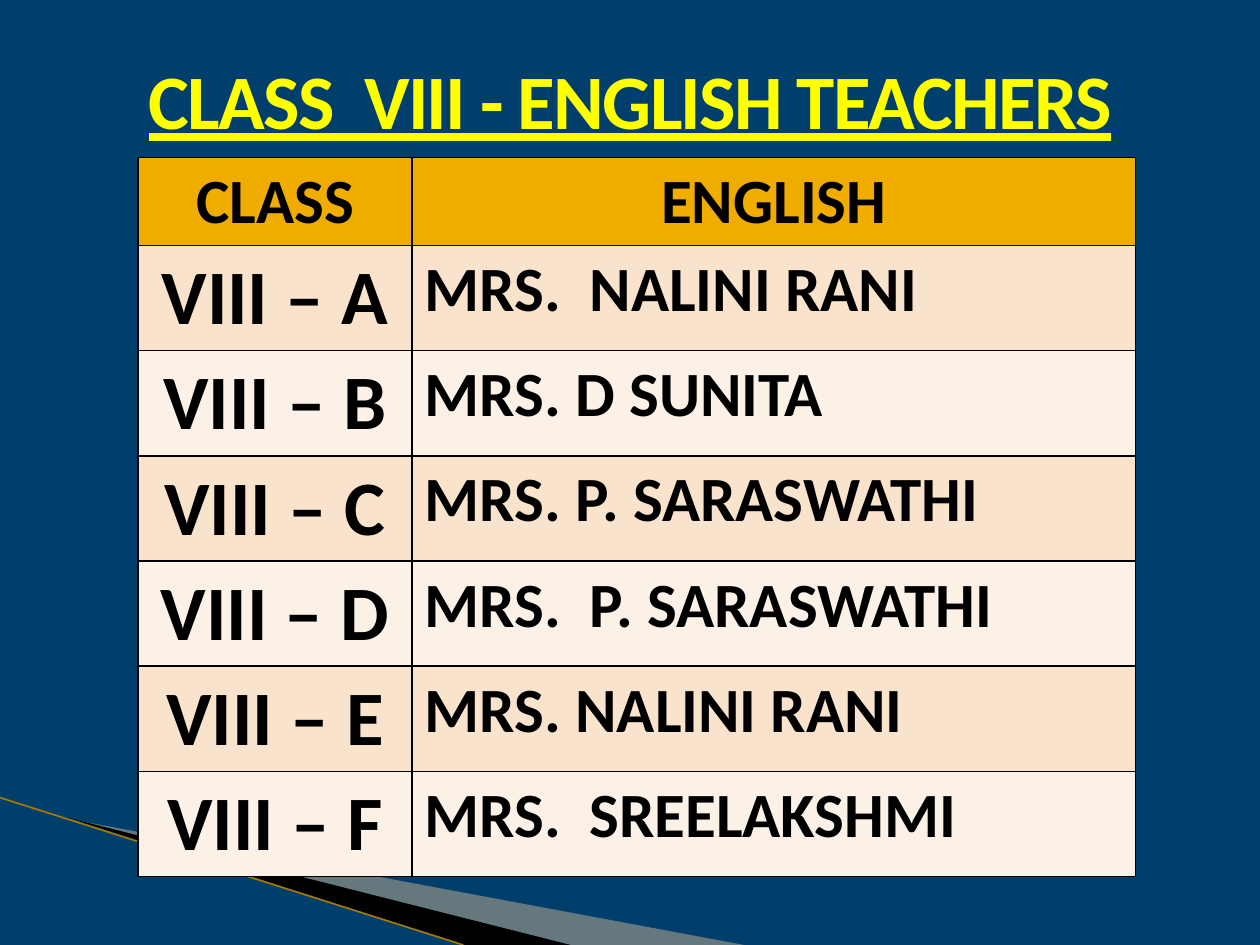
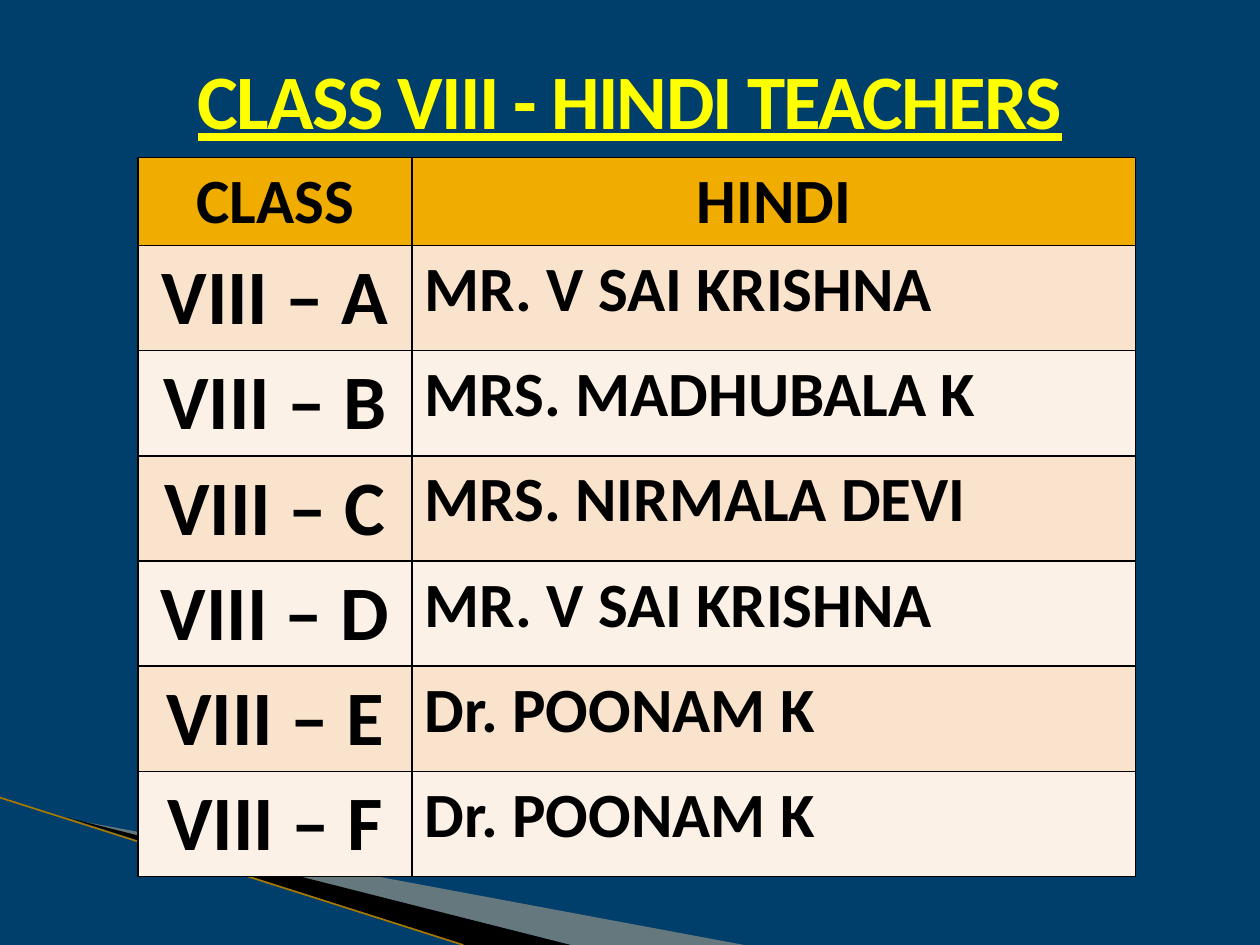
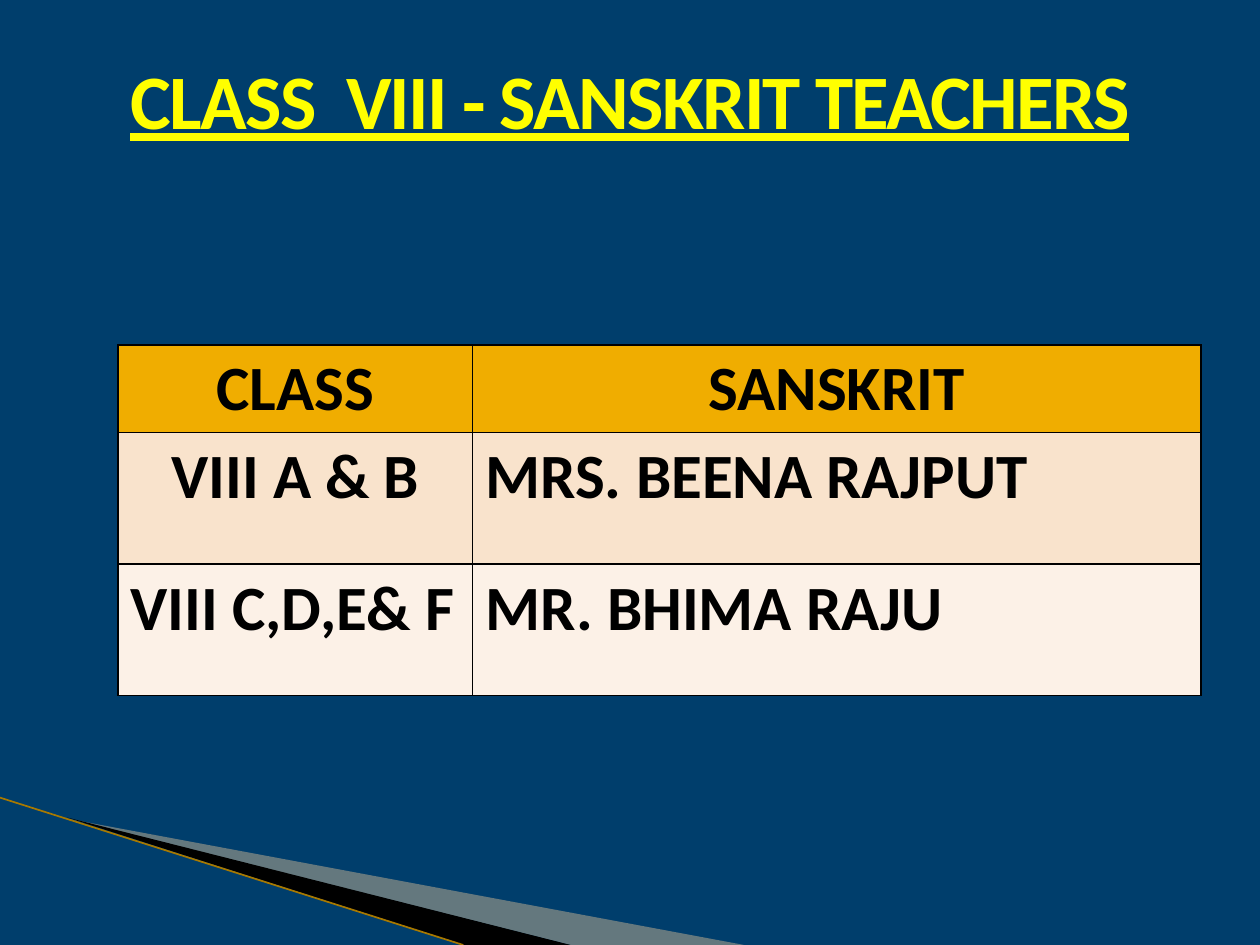
from dataclasses import dataclass

from lxml import etree
from pptx import Presentation
from pptx import util as u
from pptx.dml.color import RGBColor
from pptx.enum import shapes, text
from pptx.oxml.ns import qn

Cm, Pt = u.Cm, u.Pt
FONT = "Calibri"
COLORS = {
    "background": "003E6C", "title": "FFFF00", "ink": "000000",
    "header": "F0AD00", "odd_row": "F9E3CC", "even_row": "FCF1E7",
    "wing": "FCCF9B", "fold": "000000", "edge": "A87900",
}
HEADER_HEIGHT = 1.77
PAD_TOP, PAD_BOTTOM = 0.12, 0.09
CENTER, LEFT = text.PP_ALIGN.CENTER, text.PP_ALIGN.LEFT


@dataclass
class Wedge:
    frame: tuple[float, float, float, float]
    points: list[tuple[float, float]]
    color: str
    opacity: int = 100


@dataclass
class TeacherSlide:
    title: str
    subject: str
    rows: list[tuple[str, str]]
    left: float = 2.78
    top: float = 3.18
    widths: tuple[float, float] = (5.53, 14.58)
    row_height: float = 2.12
    class_size: int = 44
    last_class_align: text.PP_ALIGN = CENTER


WEDGES = [
    Wedge((1.98, 13.89, 10.57, 4.01),
          [(1.39, 16.51), (15, 19.05), (11.5, 19.05)], "wing", 40),
    Wedge((-0.15, 16.08, 10.57, 2.34),
          [(1.35, 16.48), (11.5, 19.05), (9.35, 19.05)], "fold"),
]


def sections(*teachers: str) -> list[tuple[str, str]]:
    return [(f"VIII – {s}", t) for s, t in zip("ABCDEF", teachers)]


SLIDES = [
    TeacherSlide("CLASS  VIII - ENGLISH TEACHERS", "ENGLISH", sections(
        "MRS.  NALINI RANI", "MRS. D SUNITA", "MRS. P. SARASWATHI",
        "MRS.  P. SARASWATHI", "MRS. NALINI RANI", "MRS.  SREELAKSHMI")),
    TeacherSlide("CLASS VIII - HINDI TEACHERS", "HINDI", sections(
        "MR. V SAI KRISHNA", "MRS. MADHUBALA K", "MRS. NIRMALA DEVI",
        "MR. V SAI KRISHNA", "Dr. POONAM K", "Dr. POONAM K")),
    TeacherSlide("CLASS  VIII - SANSKRIT TEACHERS", "SANSKRIT", [
        ("VIII A & B", "MRS. BEENA RAJPUT"),
        ("VIII C,D,E& F", "MR. BHIMA RAJU")],
        left=2.38, top=6.95, widths=(7.15, 14.68), row_height=2.65,
        class_size=36, last_class_align=LEFT),
]


def rgb(name: str) -> RGBColor:
    return RGBColor.from_string(COLORS[name])


def write(tf, content: str, *, size: int = 36, color: str = "ink",
          align=LEFT, underline: bool = False, spacing: float = 0,
          line_spacing: float = 1.0) -> None:
    p = tf.paragraphs[0]
    p.alignment = align
    p.line_spacing = line_spacing
    r = p.add_run()
    r.text = content
    r.font.name, r.font.size, r.font.bold = FONT, Pt(size), True
    r.font.color.rgb = rgb(color)
    if underline:
        r.font.underline = True
    if spacing:
        r.font._element.set("spc", str(int(spacing * 100)))


# Corner decoration shared by all slides
def set_frame(sp, frame: tuple[float, float, float, float]) -> None:
    """Change the frame while the outline stays where it is."""
    left, top, width, height = (Cm(v) for v in frame)
    dx, dy = sp.left - left, sp.top - top
    for outline in sp._element.iter(qn("a:path")):
        outline.set("w", str(width))
        outline.set("h", str(height))
    for pt in sp._element.iter(qn("a:pt")):
        pt.set("x", str(int(pt.get("x")) + dx))
        pt.set("y", str(int(pt.get("y")) + dy))
    sp.left, sp.top, sp.width, sp.height = left, top, width, height


def draw_wedge(slide, wedge: Wedge) -> None:
    points = [(Cm(x), Cm(y)) for x, y in wedge.points]
    builder = slide.shapes.build_freeform(*points[0])
    builder.add_line_segments(points[1:], close=True)
    sp = builder.convert_to_shape()
    set_frame(sp, wedge.frame)
    sp.shadow.inherit = False
    sp.line.fill.background()
    sp.fill.solid()
    sp.fill.fore_color.rgb = rgb(wedge.color)
    if wedge.opacity < 100:
        clr = sp._element.spPr.find(qn("a:solidFill"))[0]
        etree.SubElement(clr, qn("a:alpha")).set("val", str(wedge.opacity * 1000))


def draw_corner(slide) -> None:
    for wedge in WEDGES:
        draw_wedge(slide, wedge)
    line = slide.shapes.add_connector(
        shapes.MSO_CONNECTOR.STRAIGHT, Cm(0), Cm(16.08), Cm(9.34), Cm(19.05))
    line.line.color.rgb = rgb("edge")
    line.line.width = Pt(0.95)
    etree.SubElement(line._element.spPr, qn("a:effectLst"))


def draw_title(slide, title: str) -> None:
    tf = slide.shapes.add_textbox(0, 0, Cm(25.4), Cm(3.07)).text_frame
    tf.word_wrap = True
    write(tf, title, size=44, color="title", align=CENTER, underline=True,
          spacing=-1, line_spacing=1.5)


# Table
def style_cell(cell, fill: str) -> None:
    cell.margin_top, cell.margin_bottom = Cm(PAD_TOP), Cm(PAD_BOTTOM)
    tc_pr = cell._tc.get_or_add_tcPr()
    for side in ("lnL", "lnR", "lnT", "lnB"):
        ln = etree.SubElement(tc_pr, qn(f"a:{side}"), w=str(Pt(1)))
        solid = etree.SubElement(ln, qn("a:solidFill"))
        etree.SubElement(solid, qn("a:srgbClr"), val=COLORS["ink"])
    cell.fill.solid()
    cell.fill.fore_color.rgb = rgb(fill)


def draw_table(slide, data: TeacherSlide) -> None:
    count = len(data.rows)
    height = HEADER_HEIGHT + count * data.row_height
    table = slide.shapes.add_table(
        count + 1, 2, Cm(data.left), Cm(data.top),
        Cm(sum(data.widths)), Cm(height)).table
    table.first_row = table.horz_banding = False
    for column, width in zip(table.columns, data.widths):
        column.width = Cm(width)
    for i, row in enumerate([("CLASS", data.subject), *data.rows]):
        table.rows[i].height = Cm(data.row_height if i else HEADER_HEIGHT)
        fill = "header" if i == 0 else "odd_row" if i % 2 else "even_row"
        class_align = data.last_class_align if i == count else CENTER
        aligns = (class_align, LEFT if i else CENTER)
        sizes = (data.class_size if i else 36, 36)
        for j, content in enumerate(row):
            cell = table.cell(i, j)
            style_cell(cell, fill)
            write(cell.text_frame, content, size=sizes[j], align=aligns[j])


def main() -> None:
    prs = Presentation()
    prs.slide_width, prs.slide_height = Cm(25.4), Cm(19.05)
    background = prs.slide_master.background.fill
    background.solid()
    background.fore_color.rgb = rgb("background")
    for data in SLIDES:
        slide = prs.slides.add_slide(prs.slide_layouts[6])
        draw_corner(slide)
        draw_title(slide, data.title)
        draw_table(slide, data)
    prs.save("out.pptx")


if __name__ == "__main__":
    main()
